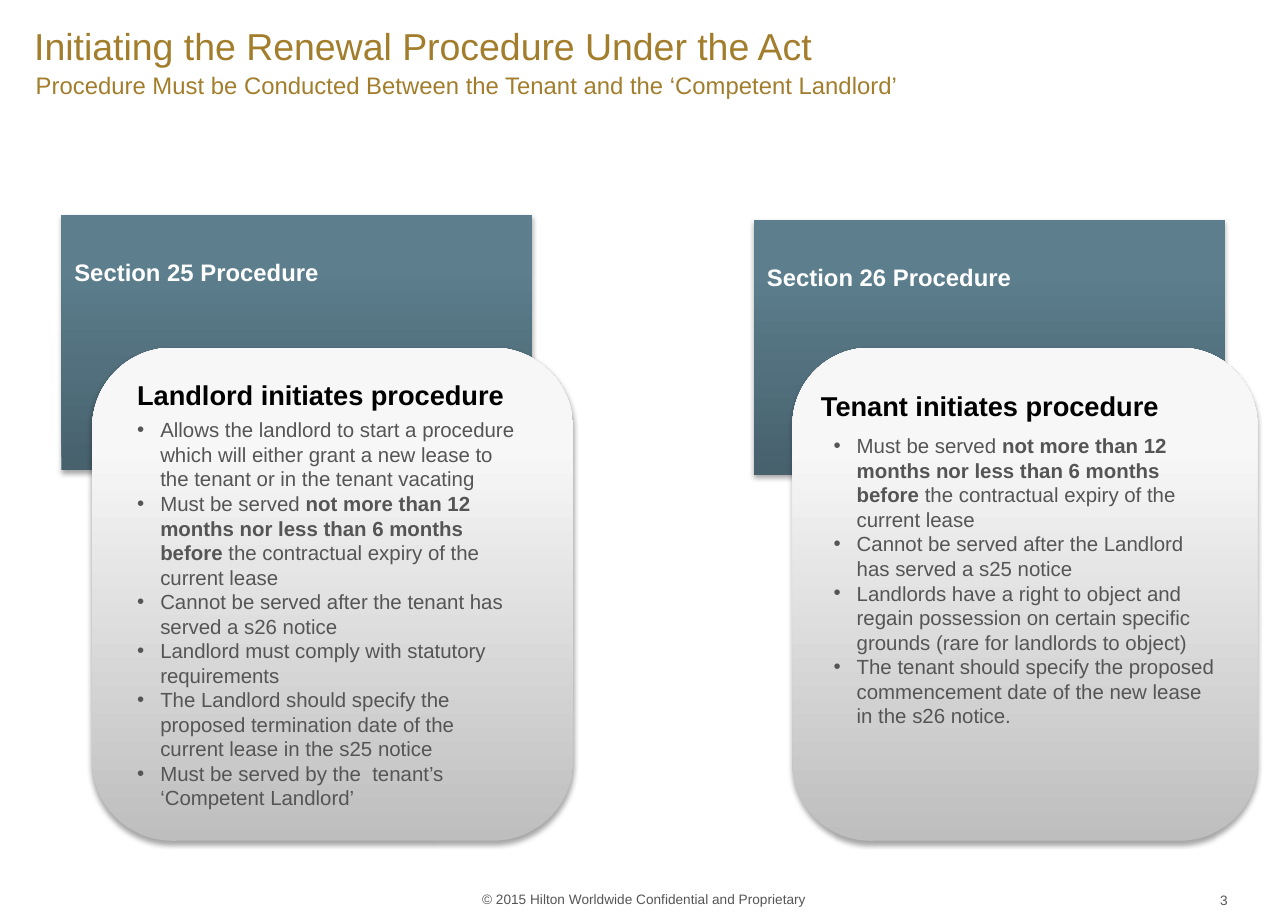
import copy

import pptx
import pptx.dml.color
import pptx.enum.shapes
import pptx.enum.text
import pptx.oxml
import pptx.oxml.ns
import pptx.util

Cm = pptx.util.Cm
Pt = pptx.util.Pt
RGBColor = pptx.dml.color.RGBColor
ALIGN = pptx.enum.text.PP_ALIGN
ANCHOR = pptx.enum.text.MSO_ANCHOR
SHAPE = pptx.enum.shapes.MSO_SHAPE

GOLD = RGBColor(0xA2, 0x7E, 0x2C)
GREY = RGBColor(0x55, 0x55, 0x55)
BLACK = RGBColor(0, 0, 0)
WHITE = RGBColor(0xFF, 0xFF, 0xFF)
TEAL_STOPS = (
    (0, RGBColor(0x47, 0x61, 0x6D)),
    (0.8, RGBColor(0x5C, 0x7E, 0x8D)),
    (1, RGBColor(0x5C, 0x7F, 0x8F)),
)
SILVER_STOPS = (
    (0, RGBColor(0xBE, 0xBE, 0xBE)),
    (0.8, RGBColor(0xF7, 0xF7, 0xF7)),
    (1, RGBColor(0xF8, 0xF8, 0xF8)),
)
NOTICE_PERIOD = (
    "Must be served **not more than 12 months nor less than 6 months before "
    "**the contractual expiry of the current lease"
)


def style(run, size, color, bold=False):
    run.font.size = Pt(size)
    run.font.color.rgb = color
    run.font.bold = bold
    run.font.name = "Arial"


def add_text(slide, box, words, size, color, bold=False,
             align=ALIGN.LEFT, anchor=ANCHOR.TOP, inset=0.25):
    frame = slide.shapes.add_textbox(*map(Cm, box)).text_frame
    frame.word_wrap = True
    frame.vertical_anchor = anchor
    frame.margin_left = Cm(inset)
    frame.text = words
    frame.paragraphs[0].alignment = align
    style(frame.paragraphs[0].runs[0], size, color, bold)
    return frame


def add_panel(slide, kind, box, stops):
    panel = slide.shapes.add_shape(kind, *map(Cm, box))
    panel.line.fill.background()
    panel.fill.gradient()
    panel.fill.gradient_angle = 90
    properties = panel._element.spPr
    stop_list = properties.find(".//" + pptx.oxml.ns.qn("a:gsLst"))
    stop_list.append(copy.deepcopy(stop_list[-1]))
    for stop, (position, color) in zip(panel.fill.gradient_stops, stops):
        stop.position = position
        stop.color.rgb = color
    panel.shadow.inherit = False
    properties.find(pptx.oxml.ns.qn("a:effectLst")).append(pptx.oxml.parse_xml(
        f'<a:outerShdw {pptx.oxml.ns.nsdecls("a")} blurRad="{Pt(3.1)}" '
        f'dist="{Pt(1.8)}" dir="5400000" rotWithShape="0">'
        '<a:srgbClr val="000000"><a:alpha val="35000"/></a:srgbClr></a:outerShdw>'
    ))
    return panel


def add_bullets(slide, box, points):
    frame = slide.shapes.add_textbox(*map(Cm, box)).text_frame
    frame.word_wrap = True
    for index, point in enumerate(points):
        paragraph = frame.add_paragraph() if index else frame.paragraphs[0]
        properties = paragraph._p.get_or_add_pPr()
        properties.set("marL", str(Cm(0.48)))
        properties.set("indent", str(-Cm(0.48)))
        namespace = pptx.oxml.ns.nsdecls("a")
        properties.append(pptx.oxml.parse_xml(f'<a:buFont {namespace} typeface="Arial"/>'))
        properties.append(pptx.oxml.parse_xml(f'<a:buChar {namespace} char="•"/>'))
        for part, words in enumerate(point.split("**")):
            run = paragraph.add_run()
            run.text = words
            style(run, 12, GREY, bold=part % 2 == 1)


def add_procedure(slide, left, top, section, heading, points,
                  card_at, card_width, heading_at, points_at):
    def place(offset, width, height):
        return left + offset[0], top + offset[1], width, height

    band = add_panel(slide, SHAPE.RECTANGLE, place((0, 0), 9.75, 5.28), TEAL_STOPS)
    label = band.text_frame
    label.vertical_anchor = ANCHOR.TOP
    label.margin_left, label.margin_top = Cm(0.27), Cm(0.89)
    label.margin_right = label.margin_bottom = 0
    label.text = section
    label.paragraphs[0].alignment = ALIGN.LEFT
    style(label.paragraphs[0].runs[0], 14, WHITE, bold=True)

    add_panel(slide, SHAPE.ROUNDED_RECTANGLE,
              place(card_at, card_width, 10.21), SILVER_STOPS)
    add_text(slide, place(heading_at, 9, 1.32), heading, 16, BLACK, bold=True)
    add_bullets(slide, place(points_at, 8.41, 8.97), points)


def add_header(slide, left, top, width):
    title = add_text(slide, (left, top, width, 1.88),
                     "Initiating the Renewal Procedure Under the Act",
                     22, GOLD, anchor=ANCHOR.MIDDLE, inset=0)
    title.paragraphs[0].line_spacing = Pt(26.7)
    add_text(slide, (left + 0.03, top + 1.34, width, 0.89),
             "Procedure Must be Conducted Between the Tenant and the ‘Competent Landlord’",
             14, GOLD, inset=0)


def add_footer(slide, left, top):
    add_text(slide, (left, top, 7.62, 0.61),
             "© 2015 Hilton Worldwide Confidential and Proprietary",
             8, GREY, align=ALIGN.CENTER, anchor=ANCHOR.BOTTOM)
    number = add_text(slide, (left + 9.67, top - 0.18, 6.22, 1.02), "3", 8, GREY,
                      align=ALIGN.RIGHT, anchor=ANCHOR.MIDDLE, inset=0)
    number.margin_right = 0


def main():
    deck = pptx.Presentation()
    deck.slide_width, deck.slide_height = Cm(26.67), Cm(19.05)
    slide = deck.slides.add_slide(deck.slide_layouts[6])
    add_header(slide, 0.71, 0, 18.3)
    add_procedure(
        slide, 1.27, 4.45, "Section 25 Procedure", "Landlord initiates procedure",
        [
            "Allows the landlord to start a procedure which will either grant "
            "a new lease to the tenant or in the tenant vacating",
            NOTICE_PERIOD,
            "Cannot be served after the tenant has served a s26 notice",
            "Landlord must comply with statutory requirements",
            "The Landlord should specify the proposed termination date of the "
            "current lease in the s25 notice",
            "Must be served by the  tenant’s ‘Competent Landlord’",
        ],
        card_at=(0.64, 2.75), card_width=9.96,
        heading_at=(1.32, 3.25), points_at=(1.32, 4.07),
    )
    add_procedure(
        slide, 15.61, 4.55, "Section 26 Procedure", "Tenant initiates procedure",
        [
            NOTICE_PERIOD,
            "Cannot be served after the Landlord has served a s25 notice",
            "Landlords have a right to object and regain possession on certain "
            "specific grounds (rare for landlords to object)",
            "The tenant should specify the proposed commencement date of the "
            "new lease in the s26 notice.",
        ],
        card_at=(0.8, 2.65), card_width=9.63,
        heading_at=(1.14, 3.38), points_at=(1.4, 4.3),
    )
    add_footer(slide, 9.53, 18.31)
    deck.save("out.pptx")


if __name__ == "__main__":
    main()
